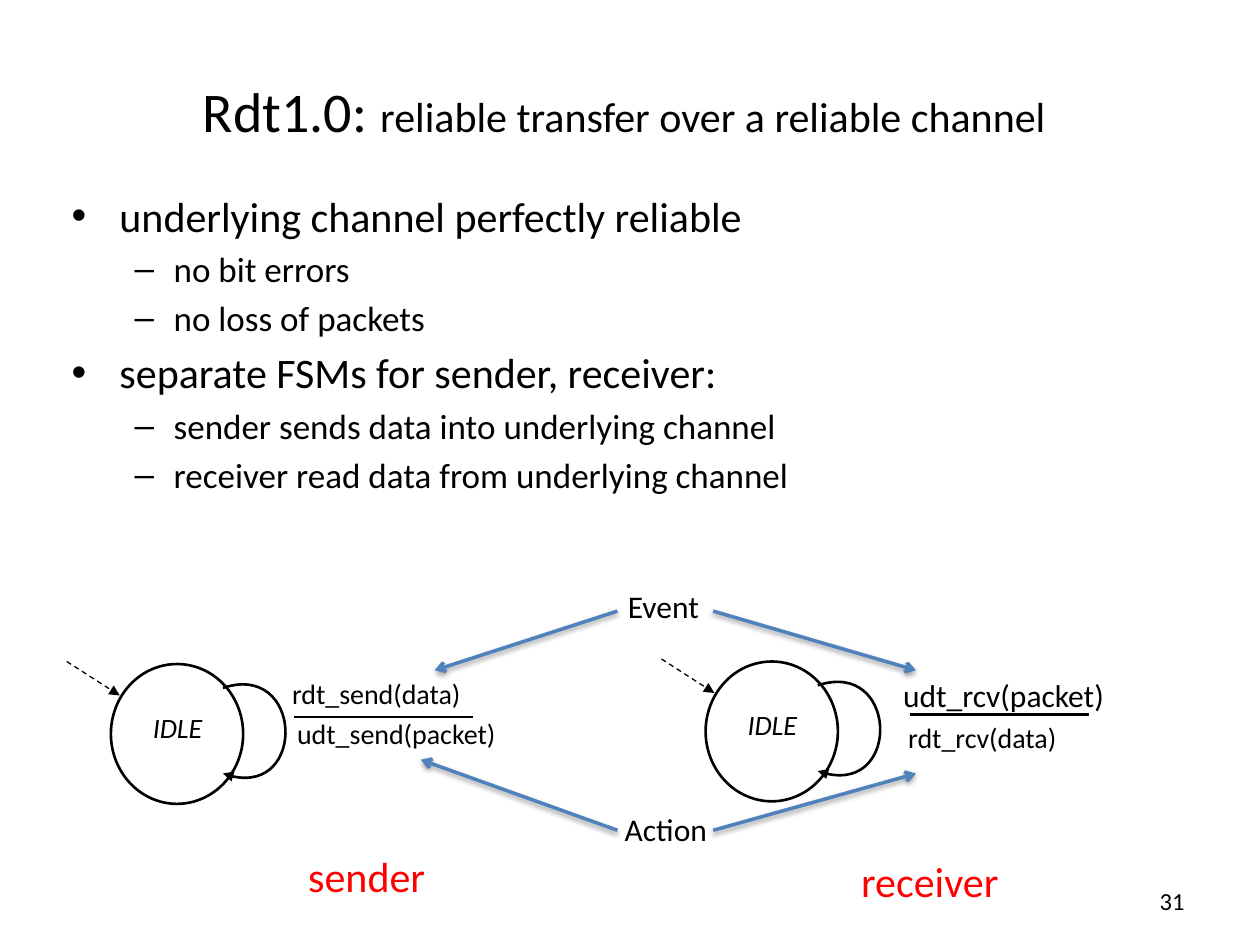
from dataclasses import dataclass

from lxml.etree import SubElement
from pptx import Presentation
from pptx.dml.color import RGBColor
from pptx.enum.dml import MSO_LINE
from pptx.enum.shapes import MSO_CONNECTOR, MSO_SHAPE
from pptx.enum.text import MSO_ANCHOR, PP_ALIGN
from pptx.oxml.ns import qn
from pptx.util import Emu, Pt

EMU_PER_PX = 9144  # 100 px to the inch
FONT = "Calibri"
BLACK = RGBColor(0x00, 0x00, 0x00)
WHITE = RGBColor(0xFF, 0xFF, 0xFF)
RED = RGBColor(0xFF, 0x00, 0x00)
BLUE = RGBColor(0x4F, 0x81, 0xBD)


@dataclass
class Label:
    text: str
    left: int
    top: int
    width: int
    height: int
    size: int = 16
    color: RGBColor = BLACK
    align: PP_ALIGN = PP_ALIGN.LEFT
    anchor: MSO_ANCHOR = MSO_ANCHOR.TOP
    italic: bool = False
    wrap: bool = True


@dataclass
class Line:
    x1: int
    y1: int
    x2: int
    y2: int
    color: RGBColor = BLACK
    width: float = 1.5
    head: str = ""
    dashed: bool = False
    shadow: bool = False


@dataclass
class BulletLevel:
    size: int
    bullet: str
    margin: int
    hanging: int


LEVELS = (BulletLevel(24, "•", 38, 38), BulletLevel(20, "–", 81, 31))
BULLETS = (
    (0, "underlying channel perfectly reliable"),
    (1, "no bit errors"),
    (1, "no loss of packets"),
    (0, "separate FSMs for sender, receiver:"),
    (1, "sender sends data into underlying channel"),
    (1, "receiver read data from underlying channel"),
)
STATE_ORIGINS = ((88, 527), (560, 525))
CENTER = PP_ALIGN.CENTER
LABELS = (
    Label("udt_send(packet)", 226, 564, 293, 65),
    Label("rdt_send(data)", 222, 532, 247, 47),
    Label("rdt_rcv(data)", 711, 567, 272, 47),
    Label("udt_rcv(packet)", 706, 532, 181, 40, 18, align=CENTER, wrap=False),
    Label("sender", 234, 670, 114, 50, 24, RED, CENTER, wrap=False),
    Label("receiver", 673, 674, 130, 50, 24, RED, CENTER, wrap=False),
    Label("Event", 440, 461, 173, 40, 18, align=CENTER),
    Label("Action", 452, 638, 153, 40, 18, align=CENTER),
    Label("31", 717, 695, 233, 40, 14, align=PP_ALIGN.RIGHT, anchor=MSO_ANCHOR.MIDDLE),
)
FRACTION_BARS = (Line(233, 569, 375, 569), Line(722, 567, 864, 567))
POINTERS = tuple(
    Line(*ends, BLUE, 2, "arrow", shadow=True)
    for ends in (
        (490, 485, 345, 532),
        (490, 659, 334, 603),
        (566, 659, 727, 614),
        (566, 485, 727, 532),
    )
)


def px(length: int) -> Emu:
    return Emu(length * EMU_PER_PX)


def style_run(run, size: int, color: RGBColor = BLACK, italic: bool = False) -> None:
    run.font.name = FONT
    run.font.size = Pt(size)
    run.font.color.rgb = color
    run.font.italic = italic


def add_label(slide, label: Label) -> None:
    box = slide.shapes.add_textbox(*map(px, (label.left, label.top, label.width, label.height)))
    frame = box.text_frame
    frame.word_wrap = label.wrap
    frame.vertical_anchor = label.anchor
    frame.text = label.text
    paragraph = frame.paragraphs[0]
    paragraph.alignment = label.align
    style_run(paragraph.runs[0], label.size, label.color, label.italic)


def add_arrowhead(shape, kind: str) -> None:
    SubElement(shape.line._get_or_add_ln(), qn("a:tailEnd"), type=kind)


def add_line(slide, line: Line) -> None:
    ends = map(px, (line.x1, line.y1, line.x2, line.y2))
    connector = slide.shapes.add_connector(MSO_CONNECTOR.STRAIGHT, *ends)
    connector.line.color.rgb = line.color
    connector.line.width = Pt(line.width)
    if line.dashed:
        connector.line.dash_style = MSO_LINE.DASH
    if line.head:
        add_arrowhead(connector, line.head)
    effects = SubElement(connector._element.spPr, qn("a:effectLst"))
    if line.shadow:
        shadow = SubElement(effects, qn("a:outerShdw"), blurRad="40000", dist="20000",
                            dir="5400000", rotWithShape="0")
        color = SubElement(shadow, qn("a:srgbClr"), val="000000")
        SubElement(color, qn("a:alpha"), val="38000")


def add_loop(slide, points: list[tuple[int, int]]) -> None:
    """Draw one cubic curve with an arrowhead: start, two control points, end."""
    builder = slide.shapes.build_freeform(*points[0], scale=EMU_PER_PX)
    builder.add_line_segments(points[1:], close=False)
    loop = builder.convert_to_shape()
    segments = loop._element.findall(".//" + qn("a:lnTo"))
    outline = segments[0].getparent()
    curve = SubElement(outline, qn("a:cubicBezTo"))
    for segment in segments:
        curve.append(segment[0])
        outline.remove(segment)
    loop.shadow.inherit = False
    loop.fill.background()
    loop.line.color.rgb = BLACK
    loop.line.width = Pt(1.5)
    add_arrowhead(loop, "triangle")


def add_state(slide, x: int, y: int) -> None:
    circle = slide.shapes.add_shape(MSO_SHAPE.OVAL, px(x), px(y), px(105), px(111))
    circle.shadow.inherit = False
    circle.fill.solid()
    circle.fill.fore_color.rgb = WHITE
    circle.line.color.rgb = BLACK
    circle.line.width = Pt(1.5)
    add_label(slide, Label("IDLE", x - 7, y + 32, 120, 100, align=CENTER, italic=True))
    add_loop(slide, [(x + 89, y + 19), (x + 152, y - 2), (x + 156, y + 111), (x + 89, y + 87)])
    add_line(slide, Line(x - 35, y - 2, x + 7, y + 25, width=0.75, head="triangle", dashed=True))


def add_title(slide) -> None:
    title = slide.shapes.title
    title.left, title.top, title.width, title.height = map(px, (58, 25, 875, 125))
    title.text_frame.vertical_anchor = MSO_ANCHOR.MIDDLE
    paragraph = title.text_frame.paragraphs[0]
    paragraph.alignment = CENTER
    for text, size in (("Rdt1.0: ", 32), ("reliable transfer over a reliable channel", 24)):
        run = paragraph.add_run()
        run.text = text
        style_run(run, size)


def add_bullets(slide) -> None:
    frame = slide.shapes.add_textbox(*map(px, (47, 146, 864, 330))).text_frame
    frame.word_wrap = True
    frame.text = "\n".join(text for _, text in BULLETS)
    for paragraph, (depth, _) in zip(frame.paragraphs, BULLETS):
        level = LEVELS[depth]
        paragraph.level = depth
        paragraph.space_before = Pt(level.size * 0.2)
        style_run(paragraph.runs[0], level.size)
        properties = paragraph._p.get_or_add_pPr()
        properties.set("marL", str(px(level.margin)))
        properties.set("indent", str(-px(level.hanging)))
        SubElement(properties, qn("a:buFont"), typeface="Arial")
        SubElement(properties, qn("a:buChar"), char=level.bullet)


def main() -> None:
    presentation = Presentation()
    presentation.slide_width, presentation.slide_height = px(1000), px(750)
    slide = presentation.slides.add_slide(presentation.slide_layouts[5])

    # Title and bullet list
    add_title(slide)
    add_bullets(slide)

    # Sender and receiver state machines
    for x, y in STATE_ORIGINS:
        add_state(slide, x, y)

    # Event and action lines, then all captions
    for line in FRACTION_BARS + POINTERS:
        add_line(slide, line)
    for label in LABELS:
        add_label(slide, label)

    presentation.save("out.pptx")


if __name__ == "__main__":
    main()
